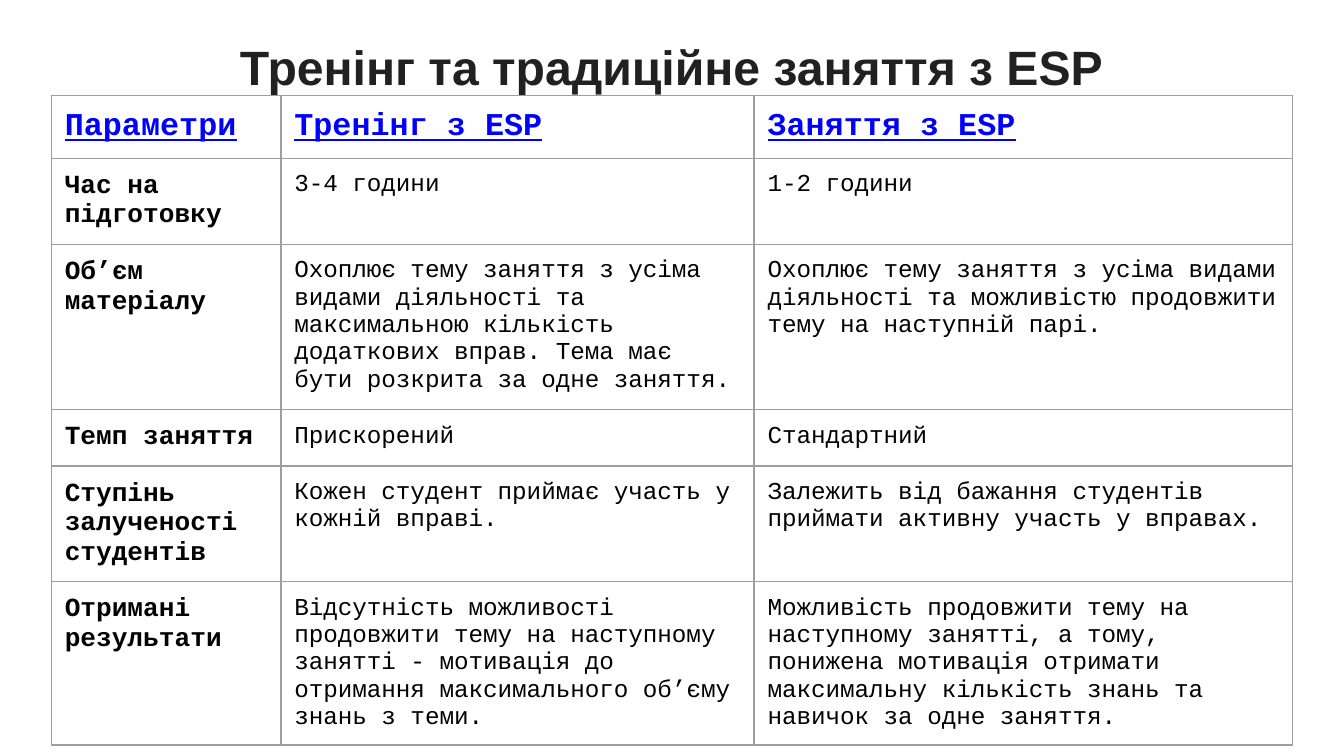
"""Build a slide comparing an ESP training session with a traditional class."""
import pptx
import pptx.dml.color
import pptx.enum.text
import pptx.oxml
import pptx.oxml.ns
import pptx.util

Pt = pptx.util.Pt
TITLE = "Тренінг та традиційне заняття з ESP"
ROWS = [
    ("Параметри", "Тренінг з ESP", "Заняття з ESP"),
    ("Час на підготовку", "3-4 години", "1-2 години"),
    ("Об’єм матеріалу",
     "Охоплює тему заняття з усіма видами діяльності та максимальною кількість "
     "додаткових вправ. Тема має бути розкрита за одне заняття.",
     "Охоплює тему заняття з усіма видами діяльності та можливістю продовжити "
     "тему на наступній парі."),
    ("Темп заняття", "Прискорений", "Стандартний"),
    ("Ступінь залученості студентів",
     "Кожен студент приймає участь у кожній вправі.",
     "Залежить від бажання студентів приймати активну участь у вправах."),
    ("Отримані результати",
     "Відсутність можливості продовжити тему на наступному занятті - мотивація "
     "до отримання максимального об’єму знань з теми.",
     "Можливість продовжити тему на наступному занятті, а тому, понижена мотивація "
     "отримати максимальну кількість знань та навичок за одне заняття."),
]
COL_WIDTHS = (123, 253.5, 288.5)
ROW_HEIGHTS = (31, 44, 88.5, 26, 60, 34.5)
INSET = 7.2
HEADER = dict(size=17, color="0000FF", bold=True, underline=True)
LABEL = dict(size=14, color="000000", bold=True)
BODY = dict(size=13, color="000000")


def rgb(value):
    return pptx.dml.color.RGBColor.from_string(value)


def add_run(p, text, size, color, font="Courier New", bold=False, underline=False):
    r = p.add_run()
    r.text = text
    r.font.name = font
    r.font.size = Pt(size)
    r.font.bold = bold
    r.font.underline = underline
    r.font.color.rgb = rgb(color)


def set_margins(box, top=INSET):
    box.margin_left = box.margin_right = box.margin_bottom = Pt(INSET)
    box.margin_top = Pt(top)


def set_borders(cell, color="9E9E9E", width=0.75):
    tc_pr = cell._tc.get_or_add_tcPr()
    for i, side in enumerate(("lnL", "lnR", "lnT", "lnB")):
        tc_pr.insert(i, pptx.oxml.parse_xml(
            f'<a:{side} {pptx.oxml.ns.nsdecls("a")} w="{Pt(width)}">'
            f'<a:solidFill><a:srgbClr val="{color}"/></a:solidFill></a:{side}>'))


def add_title(slide):
    sp = slide.shapes.title
    sp.left, sp.top, sp.width, sp.height = Pt(24.5), Pt(10), Pt(671), Pt(34.5)
    tf = sp.text_frame
    tf.word_wrap = True
    tf.auto_size = pptx.enum.text.MSO_AUTO_SIZE.NONE
    tf.vertical_anchor = pptx.enum.text.MSO_ANCHOR.TOP
    set_margins(tf, top=10)
    p = tf.paragraphs[0]
    p.alignment = pptx.enum.text.PP_ALIGN.CENTER
    add_run(p, TITLE, 25.8, "212121", font="Arial", bold=True)


def add_comparison(slide):
    table = slide.shapes.add_table(
        len(ROWS), len(COL_WIDTHS), Pt(27.5), Pt(51),
        Pt(sum(COL_WIDTHS)), Pt(sum(ROW_HEIGHTS))).table
    table.first_row = table.horz_banding = False
    for column, width in zip(table.columns, COL_WIDTHS):
        column.width = Pt(width)
    for i, texts in enumerate(ROWS):
        table.rows[i].height = Pt(ROW_HEIGHTS[i])
        for j, text in enumerate(texts):
            cell = table.cell(i, j)
            cell.fill.background()
            set_borders(cell)
            set_margins(cell)
            style = HEADER if i == 0 else LABEL if j == 0 else BODY
            add_run(cell.text_frame.paragraphs[0], text, **style)


def main():
    prs = pptx.Presentation()
    prs.slide_width, prs.slide_height = Pt(720), Pt(405)
    slide = prs.slides.add_slide(prs.slide_layouts[5])
    slide.background.fill.solid()
    slide.background.fill.fore_color.rgb = rgb("FFFFFF")
    add_title(slide)
    add_comparison(slide)
    prs.save("out.pptx")


if __name__ == "__main__":
    main()
